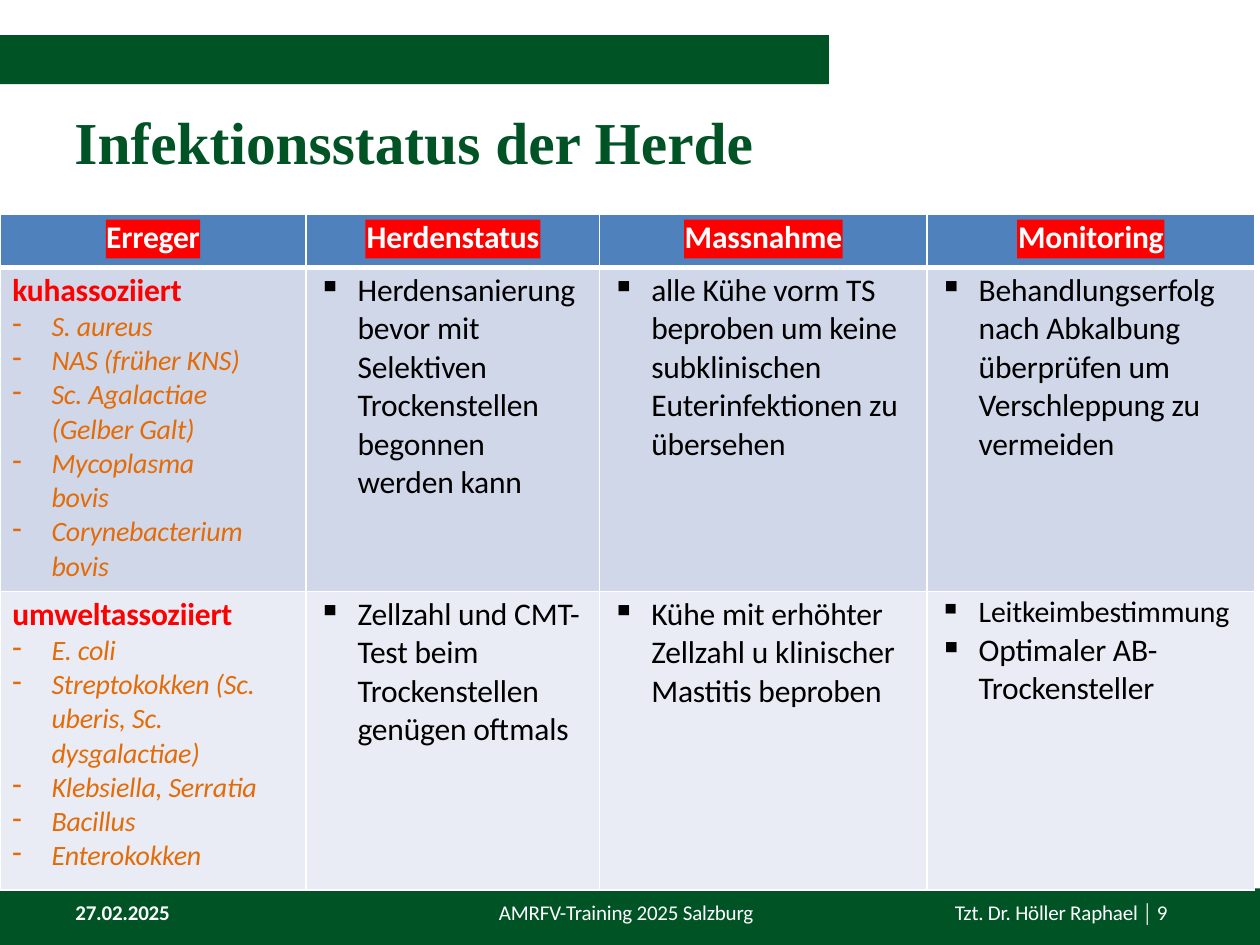
from lxml import etree
from pptx import Presentation
from pptx.dml.color import RGBColor
from pptx.enum.shapes import MSO_SHAPE
from pptx.enum.text import MSO_ANCHOR, PP_ALIGN
from pptx.oxml.ns import qn
from pptx.util import Cm, Pt

RECT = MSO_SHAPE.RECTANGLE
TOP = MSO_ANCHOR.TOP
LEFT, CENTER = PP_ALIGN.LEFT, PP_ALIGN.CENTER

COLORS = {
    "green": "005325", "blue": "4F81BC", "red": "FF0000", "orange": "E36C09",
    "white": "FFFFFF", "black": "000000", "dark": "D0D7E8", "light": "E9ECF4",
}
TABLE_TOP = 4.32
COLS = [6.17, 5.92, 6.6, 6.6]
ROWS = [1.07, 6.53, 6.02]
HEADERS = [("Erreger", 1.9), ("Herdenstatus", 3.53),
           ("Massnahme", 3.2), ("Monitoring", 2.97)]
GROUPS = [
    ("kuhassoziiert", [
        ("S. aureus", 0), ("NAS (früher KNS)", 0),
        ("Sc. Agalactiae (Gelber Galt)", 1.3), ("Mycoplasma bovis", 1.3),
        ("Corynebacterium bovis", 0)]),
    ("umweltassoziiert", [
        ("E. coli", 0), ("Streptokokken (Sc. uberis, Sc. dysgalactiae)", 0),
        ("Klebsiella, Serratia", 0), ("Bacillus", 0), ("Enterokokken", 0)]),
]
POINTS = [
    [[("Herdensanierung bevor mit Selektiven Trockenstellen begonnen werden kann",
       {"right": 0.38})],
     [("alle Kühe vorm TS beproben um keine subklinischen Euterinfektionen "
       "zu übersehen", {})],
     [("Behandlungserfolg nach Abkalbung überprüfen um Verschleppung zu "
       "vermeiden", {})]],
    [[("Zellzahl und CMT- Test beim Trockenstellen genügen oftmals", {})],
     [("Kühe mit erhöhter Zellzahl u klinischer Mastitis beproben", {})],
     [("Leitkeimbestimmung", {"size": 17, "line": 20.3}),
      ("Optimaler AB- Trockensteller", {"line": 21.6, "before": 0.7})]],
]
FOOTERS = [("27.02.2025", 1.52, 2.2, True),
           ("AMRFV-Training 2025 Salzburg", 10.06, 5.6, False),
           ("Tzt. Dr. Höller Raphael │ 9", 19.25, 5, False)]


def rgb(name):
    return RGBColor.from_string(COLORS[name])


def write(tf, text, size=18, color="black", bold=False, italic=False,
          font="Calibri", align=LEFT, bullet=None, indent=0, right=0,
          line=None, before=None, spacing=-0.1):
    p = tf.paragraphs[0]
    if p.runs:
        p = tf.add_paragraph()
    pPr = p._p.get_or_add_pPr()
    pPr.set("marL", str(Cm(indent)))
    pPr.set("marR", str(Cm(right)))
    pPr.set("indent", str(Cm(-0.79 if bullet else 0)))
    if bullet:
        etree.SubElement(pPr, qn("a:buChar")).set("char", bullet)
    p.alignment = align
    if line:
        p.line_spacing = Pt(line)
    if before:
        p.space_before = Pt(before)
    r = p.add_run()
    r.text = text
    r.font.name = font
    r.font.size = Pt(size)
    r.font.bold = bold
    r.font.italic = italic
    r.font.color.rgb = rgb(color)
    r._r.get_or_add_rPr().set("spc", str(round(spacing * 100)))


def set_frame(tf, top=0):
    tf.word_wrap = True
    tf.vertical_anchor = TOP
    tf.margin_left = tf.margin_right = tf.margin_bottom = 0
    tf.margin_top = Cm(top)


def add_rect(slide, x, y, w, h, color):
    sp = slide.shapes.add_shape(RECT, Cm(x), Cm(y), Cm(w), Cm(h))
    sp.shadow.inherit = False
    sp.fill.solid()
    sp.fill.fore_color.rgb = rgb(color)
    sp.line.fill.background()


def add_title(slide, text):
    sp = slide.shapes.title
    sp.left, sp.top, sp.width, sp.height = Cm(1.5), Cm(2.08), Cm(14.2), Cm(1.5)
    set_frame(sp.text_frame, 0.03)
    write(sp.text_frame, text, size=34, color="green", bold=True,
          font="Times New Roman", spacing=0)


def add_footer(slide, text, x, w, bold):
    tf = slide.shapes.add_textbox(Cm(x), Cm(18.21), Cm(w), Cm(0.48)).text_frame
    set_frame(tf)
    write(tf, text, size=12, color="white", bold=bold, line=12.4)


def set_borders(cell, top, bottom):
    tcPr = cell._tc.get_or_add_tcPr()
    for side, width in (("L", 1), ("R", 1), ("T", top), ("B", bottom)):
        ln = etree.SubElement(tcPr, qn(f"a:ln{side}"), w=str(Pt(width)))
        fill = etree.SubElement(ln, qn("a:solidFill"))
        etree.SubElement(fill, qn("a:srgbClr"), val=COLORS["white"])


def format_cell(cell, color=None, top=1, bottom=1):
    cell.margin_left = cell.margin_right = cell.margin_bottom = 0
    cell.margin_top = Cm(0.08)
    cell.vertical_anchor = TOP
    set_borders(cell, top, bottom)
    if color:
        cell.fill.solid()
        cell.fill.fore_color.rgb = rgb(color)
    else:
        cell.fill.background()
    return cell.text_frame


def add_header_bands(slide):
    add_rect(slide, 0, TABLE_TOP, sum(COLS), 1.02, "blue")
    for i, (_, w) in enumerate(HEADERS):
        x = sum(COLS[:i]) + (COLS[i] - w) / 2
        add_rect(slide, x, 4.43, w, 0.78, "red")


def add_status_table(slide):
    table = slide.shapes.add_table(len(ROWS), len(COLS), 0, Cm(TABLE_TOP),
                                   Cm(sum(COLS)), Cm(sum(ROWS))).table
    table.horz_banding = False
    for col, w in zip(table.columns, COLS):
        col.width = Cm(w)
    for row, h in zip(table.rows, ROWS):
        row.height = Cm(h)

    for c, (text, _) in enumerate(HEADERS):
        tf = format_cell(table.cell(0, c), bottom=3)
        write(tf, text, color="white", bold=True, align=CENTER)

    for i, (name, germs) in enumerate(GROUPS):
        style = {"color": ("dark", "light")[i], "top": (3, 1)[i]}
        tf = format_cell(table.cell(i + 1, 0), **style)
        write(tf, name, color="red", bold=True, indent=0.25)
        for germ, right in germs:
            write(tf, germ, size=16, color="orange", italic=True, bullet="-",
                  indent=1.04, right=right)
        for c, points in enumerate(POINTS[i], 1):
            tf = format_cell(table.cell(i + 1, c), **style)
            for text, options in points:
                write(tf, text, bullet="▪", indent=1.04, **options)


def main():
    prs = Presentation()
    prs.slide_width, prs.slide_height = Cm(25.4), Cm(19.05)
    slide = prs.slides.add_slide(prs.slide_layouts[5])
    add_rect(slide, 0, 17.91, 25.4, 1.14, "green")
    add_rect(slide, 0, 0.71, 16.71, 0.99, "green")
    add_title(slide, "Infektionsstatus der Herde")
    add_header_bands(slide)
    add_status_table(slide)
    for footer in FOOTERS:
        add_footer(slide, *footer)
    prs.save("out.pptx")


if __name__ == "__main__":
    main()
